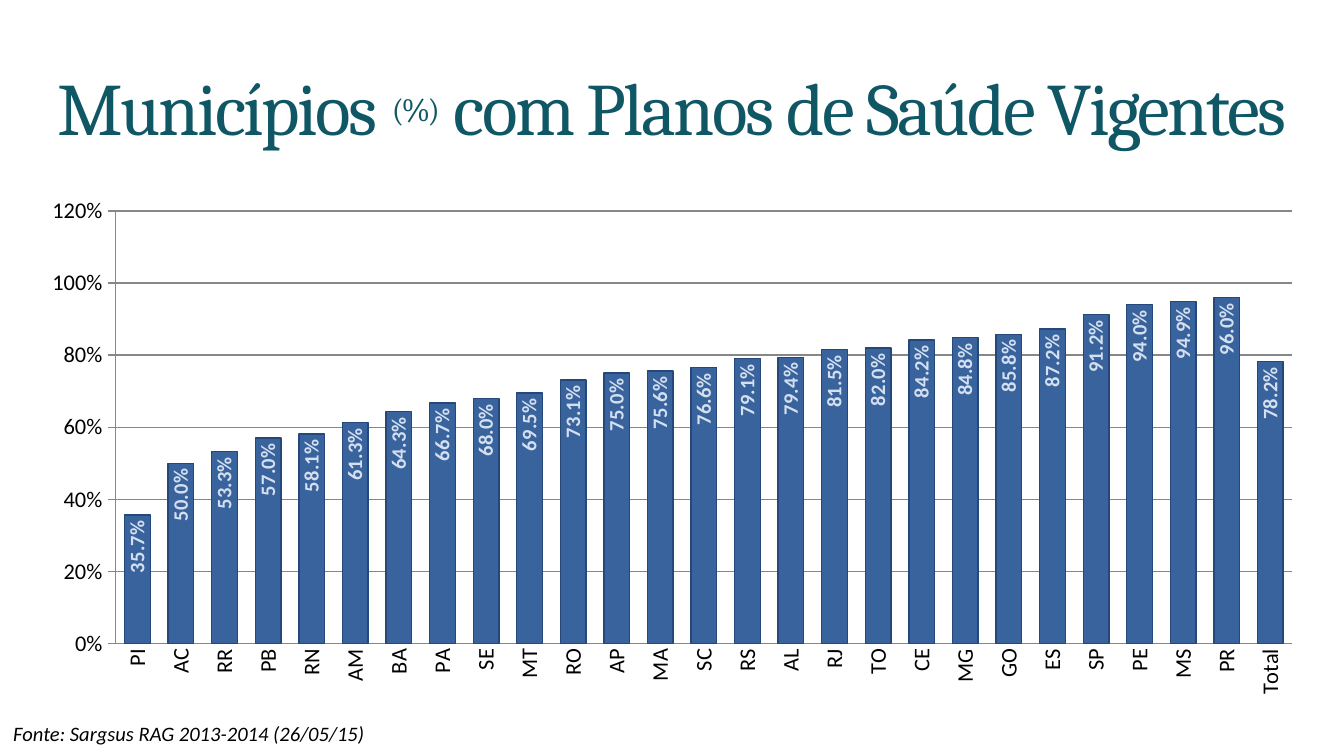
from pptx import Presentation
from pptx.chart.data import CategoryChartData
from pptx.dml.color import RGBColor
from pptx.enum.chart import XL_CHART_TYPE, XL_LABEL_POSITION, XL_TICK_MARK
from pptx.enum.text import MSO_ANCHOR, MSO_AUTO_SIZE, PP_ALIGN
from pptx.oxml import parse_xml
from pptx.oxml.ns import nsdecls, qn
from pptx.util import Emu, Pt

PX = 4572  # 200 px to the inch
PAGE_SIZE = (2000, 1125)
TITLE_BOX = (0, 76, 2000, 188)
CHART_BOX = (40, 280, 1922, 772)
PLOT_BOX = (132, 34, 1751, 644)  # inside the chart box
SOURCE_BOX = (0, 1062, 606, 58)

SHARES = {
    "PI": 0.357, "AC": 0.5, "RR": 0.533, "PB": 0.57, "RN": 0.581, "AM": 0.613,
    "BA": 0.643, "PA": 0.667, "SE": 0.68, "MT": 0.695, "RO": 0.731, "AP": 0.75,
    "MA": 0.756, "SC": 0.766, "RS": 0.791, "AL": 0.794, "RJ": 0.815, "TO": 0.82,
    "CE": 0.842, "MG": 0.848, "GO": 0.858, "ES": 0.872, "SP": 0.912, "PE": 0.94,
    "MS": 0.949, "PR": 0.96, "Total": 0.782,
}


def color(value):
    return RGBColor.from_string(value)


def emu(lengths):
    return [Emu(length * PX) for length in lengths]


def apply(target, values):
    for name, value in values.items():
        setattr(target, name, value)


def set_font(font, size, shade, **values):
    apply(font, {"name": "Calibri", "size": Pt(size), **values})
    font.color.rgb = color(shade)


def set_line(line, shade):
    line.color.rgb = color(shade)
    line.width = Pt(0.75)


def turn_upright(element):
    """Rotate chart text to read from bottom to top."""
    body = element.find(qn("c:txPr")).find(qn("a:bodyPr"))
    body.set("rot", "-5400000")
    body.set("vert", "horz")


def add_title(page, box):
    title = page.shapes.title
    apply(title, dict(zip(("left", "top", "width", "height"), emu(box))))
    frame = title.text_frame
    margins = dict.fromkeys(
        ("margin_left", "margin_top", "margin_right", "margin_bottom"), Emu(8 * PX))
    apply(frame, {"word_wrap": True, "auto_size": MSO_AUTO_SIZE.NONE,
                  "vertical_anchor": MSO_ANCHOR.MIDDLE, **margins})
    para = frame.paragraphs[0]
    apply(para, {"alignment": PP_ALIGN.CENTER, "line_spacing": 0.8})
    for text, size, baseline in (("Municípios ", 39.6, 0), ("(%)", 29.7, 25000),
                                 (" com Planos de Saúde Vigentes", 39.6, 0)):
        span = para.add_run()
        span.text = text
        set_font(span.font, size, "105766", name="Cambria")
        properties = span.font._element
        properties.set("spc", "-130")
        properties.set("baseline", str(baseline))


def place_plot(chart, box, plot_box):
    """Fix the inner plot area as shares of the chart box."""
    wholes = (box[2], box[3]) * 2
    sizes = "".join(f'<c:{side} val="{length / whole:.4f}"/>'
                    for side, length, whole in zip("xywh", plot_box, wholes))
    modes = "".join(f'<c:{side}Mode val="edge"/>' for side in "xy")
    area = chart._chartSpace.chart.plotArea
    for layout in area.findall(qn("c:layout")):
        area.remove(layout)
    area.insert(0, parse_xml(
        f'<c:layout {nsdecls("c")}><c:manualLayout><c:layoutTarget val="inner"/>'
        f'{modes}{sizes}</c:manualLayout></c:layout>'))


def add_share_chart(page, box):
    data = CategoryChartData(number_format="0.0%")
    data.categories = list(SHARES)
    data.add_series("Series 1", list(SHARES.values()))
    chart = page.shapes.add_chart(
        XL_CHART_TYPE.COLUMN_CLUSTERED, *emu(box), data).chart
    apply(chart, {"has_legend": False, "has_title": False})
    set_font(chart.font, 14, "000000")
    place_plot(chart, box, PLOT_BOX)

    # Axes
    states, percent = chart.category_axis, chart.value_axis
    states.major_tick_mark = XL_TICK_MARK.NONE
    apply(percent, {"minimum_scale": 0, "maximum_scale": 1.2, "major_unit": 0.2,
                    "major_tick_mark": XL_TICK_MARK.OUTSIDE,
                    "has_major_gridlines": True})
    apply(percent.tick_labels, {"number_format": "0%",
                                "number_format_is_linked": False})
    for axis in (states, percent):
        set_font(axis.tick_labels.font, 12, "000000")
        set_line(axis.format.line, "878787")
    set_line(percent.major_gridlines.format.line, "878787")
    turn_upright(states._element)

    # Columns and their labels
    plot = chart.plots[0]
    apply(plot, {"gap_width": 70, "vary_by_categories": False})
    columns = plot.series[0]
    columns.format.fill.solid()
    columns.format.fill.fore_color.rgb = color("39639D")
    set_line(columns.format.line, "264779")
    labels = columns.data_labels
    apply(labels, {"show_value": True, "number_format": "0.0%",
                   "number_format_is_linked": False,
                   "position": XL_LABEL_POSITION.INSIDE_END})
    set_font(labels.font, 11, "D4DFEF", bold=True)
    turn_upright(labels._element)


def add_source(page, box):
    frame = page.shapes.add_textbox(*emu(box)).text_frame
    apply(frame, {"word_wrap": True, "vertical_anchor": MSO_ANCHOR.MIDDLE,
                  "auto_size": MSO_AUTO_SIZE.SHAPE_TO_FIT_TEXT})
    span = frame.paragraphs[0].add_run()
    span.text = "Fonte: Sargsus RAG 2013-2014 (26/05/15)"
    set_font(span.font, 11, "000000", italic=True)


def main():
    deck = Presentation()
    apply(deck, dict(zip(("slide_width", "slide_height"), emu(PAGE_SIZE))))
    page = deck.slides.add_slide(deck.slide_layouts[5])
    add_title(page, TITLE_BOX)
    add_share_chart(page, CHART_BOX)
    add_source(page, SOURCE_BOX)
    deck.save("out.pptx")


if __name__ == "__main__":
    main()
